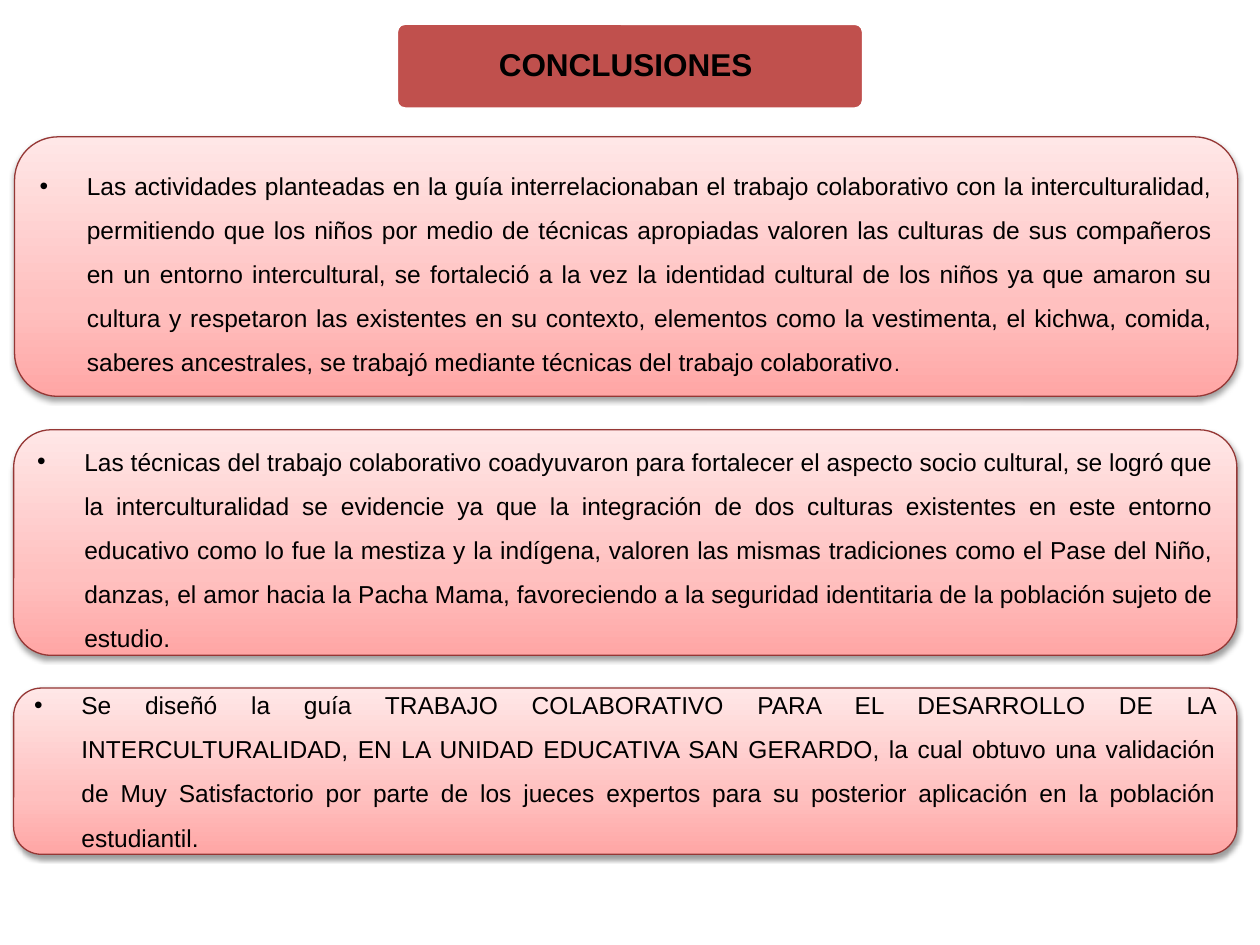
from pptx import Presentation
from pptx.dml.color import RGBColor
from pptx.enum.shapes import MSO_SHAPE as Shape
from pptx.enum.text import MSO_ANCHOR as Anchor, PP_ALIGN as Align
from pptx.oxml import parse_xml
from pptx.util import Pt

NS = 'xmlns:a="http://schemas.openxmlformats.org/drawingml/2006/main"'
GRADIENT = [(0, "FFA6A5"), (35, "FFC0BF"), (100, "FFE7E7")]
BODY = {"name": "Arial", "size": Pt(14)}
HEADING = {"name": "Arial", "size": Pt(18), "bold": True}

# Each conclusion: box and bottom margin in points, then its runs with their sizes
CONCLUSIONS = [
    ((8.3, 78.2, 699, 148.3), 3.6, [
        ("Las actividades planteadas en la guía interrelacionaban el trabajo colaborativo con la "
         "interculturalidad, permitiendo que los niños por medio de técnicas apropiadas valoren "
         "las culturas de sus compañeros en un entorno intercultural, se fortaleció a la vez la "
         "identidad cultural de los niños ya que amaron su cultura y respetaron las existentes en "
         "su contexto, elementos como la vestimenta, el kichwa, comida, saberes ancestrales, se "
         "trabajó mediante técnicas del trabajo colaborativo", 14),
        (".", 12)]),
    ((7.8, 245.6, 699, 128.9), 4, [
        ("Las técnicas del trabajo colaborativo coadyuvaron para fortalecer el aspecto socio "
         "cultural, se logró que la interculturalidad se evidencie ya que la integración de dos "
         "culturas existentes en este entorno educativo como lo fue la mestiza y la indígena, "
         "valoren las mismas tradiciones como el Pase del Niño, danzas, el amor hacia la Pacha "
         "Mama, favoreciendo a la seguridad identitaria de la población sujeto de estudio.", 14)]),
    ((7.8, 393.2, 699, 95), 12, [
        ("Se diseñó la guía TRABAJO COLABORATIVO PARA EL DESARROLLO DE LA INTERCULTURALIDAD, EN "
         "LA UNIDAD EDUCATIVA SAN GERARDO, la cual obtuvo una validación de Muy Satisfactorio por "
         "parte de los jueces expertos para su posterior aplicación en la población estudiantil.",
         14)]),
]


def color(hex_value):
    return RGBColor.from_string(hex_value)


def apply(target, values):
    for name, value in values.items():
        setattr(target, name, value)


def add_run(paragraph, text, font_values):
    run = paragraph.add_run()
    run.text = text
    apply(run.font, font_values)
    run.font.color.rgb = color("000000")


def rounded_box(slide, box, line_color, line_width):
    panel = slide.shapes.add_shape(Shape.ROUNDED_RECTANGLE, *map(Pt, box))
    panel.shadow.inherit = False
    panel.line.color.rgb = color(line_color)
    panel.line.width = Pt(line_width)
    return panel


def add_heading(slide, box):
    banner = rounded_box(slide, box, "FFFFFF", 2)
    banner.adjustments[0] = 0.1
    banner.fill.solid()
    banner.fill.fore_color.rgb = color("C0504D")

    # Heading text, inset within the banner
    left, top, width, height = box
    label = slide.shapes.add_textbox(Pt(left + 4), Pt(top + 1.5), Pt(width - 8), Pt(height - 3))
    frame = label.text_frame
    apply(frame, {"word_wrap": True, "vertical_anchor": Anchor.MIDDLE,
                  "margin_left": Pt(3), "margin_right": Pt(3),
                  "margin_top": Pt(2), "margin_bottom": Pt(2)})
    title = frame.paragraphs[0]
    apply(title, {"alignment": Align.CENTER, "line_spacing": 0.9})
    add_run(title, "CONCLUSIONES ", HEADING)


def add_conclusion(slide, box, bottom_margin, runs):
    panel = rounded_box(slide, box, "953735", 0.75)
    properties = panel.element.spPr

    # Gradient rising from dark to light
    stops = "".join(f'<a:gs pos="{pos * 1000}"><a:srgbClr val="{tone}"/></a:gs>'
                    for pos, tone in GRADIENT)
    properties.insert_element_before(parse_xml(
        f'<a:gradFill {NS} rotWithShape="1"><a:gsLst>{stops}</a:gsLst>'
        '<a:lin ang="16200000" scaled="1"/></a:gradFill>'), "a:ln")

    # Soft shadow below
    properties.find("{*}effectLst").append(parse_xml(
        f'<a:outerShdw {NS} blurRad="{Pt(3.15)}" dist="{Pt(1.57)}" dir="5400000" '
        'rotWithShape="0"><a:srgbClr val="000000"><a:alpha val="38000"/></a:srgbClr>'
        '</a:outerShdw>'))

    # Justified bullet
    frame = panel.text_frame
    apply(frame, {"word_wrap": True, "vertical_anchor": Anchor.MIDDLE,
                  "margin_bottom": Pt(bottom_margin)})
    point = frame.paragraphs[0]
    apply(point, {"alignment": Align.JUSTIFY, "line_spacing": 1.5})
    indents = point._p.get_or_add_pPr()
    indents.set("marL", str(Pt(27)))
    indents.set("indent", str(Pt(-27)))
    indents.append(parse_xml(f'<a:buFont {NS} typeface="Arial"/>'))
    indents.append(parse_xml(f'<a:buChar {NS} char="•"/>'))
    for text, size in runs:
        add_run(point, text, {**BODY, "size": Pt(size)})


def main():
    deck = Presentation()
    deck.slide_width, deck.slide_height = Pt(720), Pt(540)
    slide = deck.slides.add_slide(deck.slide_layouts[6])
    add_heading(slide, (226.5, 13.3, 267, 49))
    for box, bottom_margin, runs in CONCLUSIONS:
        add_conclusion(slide, box, bottom_margin, runs)
    deck.save("out.pptx")


if __name__ == "__main__":
    main()
